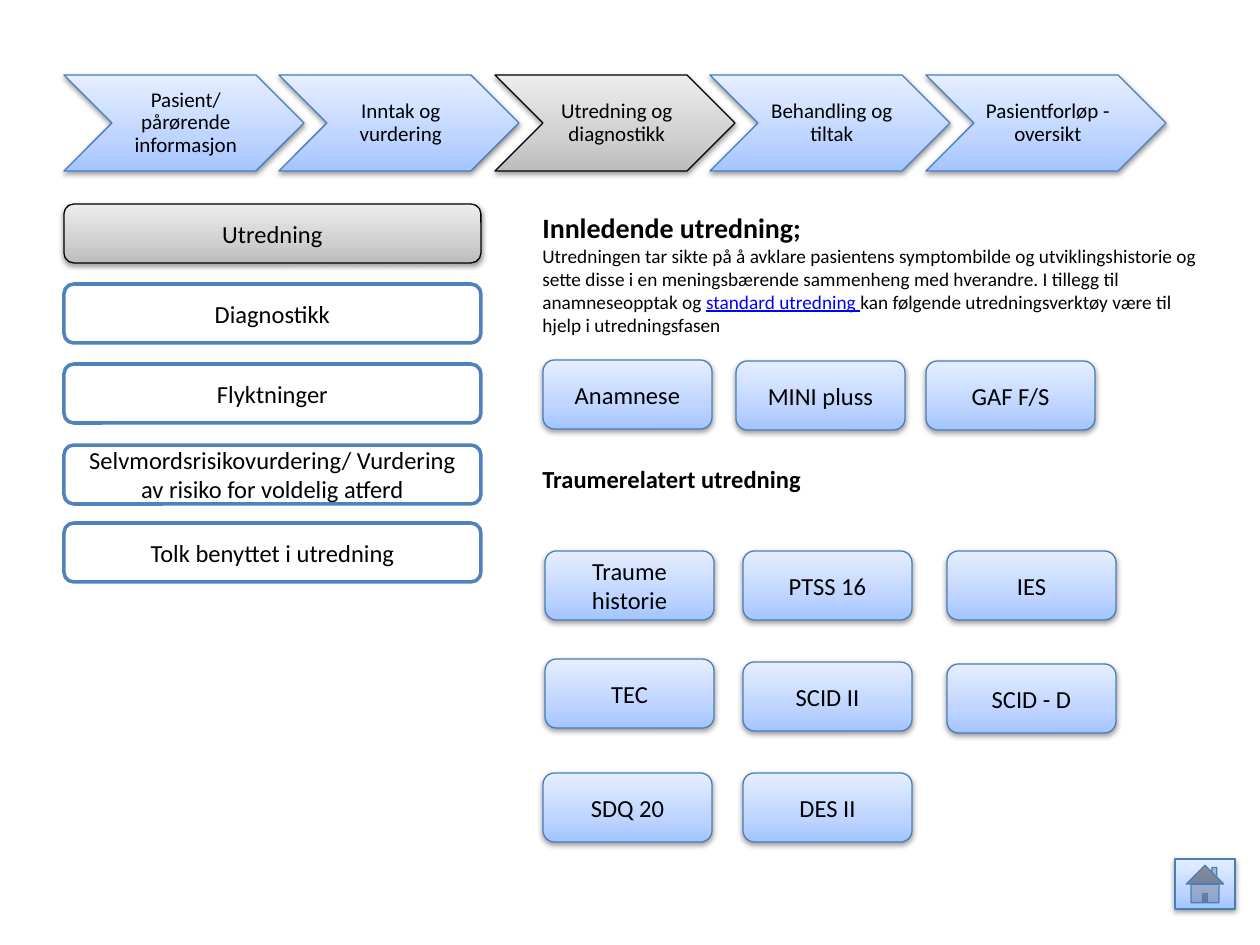
from copy import deepcopy

from pptx import Presentation, oxml, util as u
from pptx.dml.color import RGBColor
from pptx.enum import shapes, text
from pptx.oxml import ns

PX = u.Inches(1) / 126
FONT = "Calibri"
COLORS = {
    "text": "000000",
    "link": "0000FF",
    "white": "FFFFFF",
    "outline": "4F81BD",
    "blue_line": "4A7EBB",
    "grey_line": "000000",
}
GRADIENTS = {
    "blue": ["A3C4FF", "BFD5FF", "E5EEFF"],
    "grey": ["BCBCBC", "D0D0D0", "EDEDED"],
}
SHADOW = (
    f'<a:outerShdw {ns.nsdecls("a")} blurRad="40000" dist="20000" dir="5400000" rotWithShape="0">'
    '<a:srgbClr val="000000"><a:alpha val="38000"/></a:srgbClr></a:outerShdw>'
)


def format_run(run, size, color="text", bold=False):
    run.font.name = FONT
    run.font.size = u.Pt(size)
    run.font.bold = bold
    run.font.color.rgb = RGBColor.from_string(COLORS[color])


def add_button(kind, left, top, width, height, style, label="", size=14):
    shape = slide.shapes.add_shape(kind, *[round(n * PX) for n in (left, top, width, height)])
    shape.shadow.inherit = False
    if style == "outline":
        shape.fill.solid()
        shape.fill.fore_color.rgb = RGBColor.from_string(COLORS["white"])
        shape.line.color.rgb = RGBColor.from_string(COLORS["outline"])
        shape.line.width = u.Pt(2)
    else:
        shape.fill.gradient()
        shape.fill.gradient_angle = 90
        properties = shape._element.spPr
        stop_list = properties.find(".//" + ns.qn("a:gsLst"))
        stop_list.append(deepcopy(stop_list[0]))
        for stop, position, color in zip(shape.fill.gradient_stops, (0, 0.35, 1), GRADIENTS[style]):
            stop.position = position
            stop.color.rgb = RGBColor.from_string(color)
        shape.line.color.rgb = RGBColor.from_string(COLORS[style + "_line"])
        shape.line.width = u.Pt(0.75)
        properties.find(ns.qn("a:effectLst")).append(oxml.parse_xml(SHADOW))
    if label:
        frame = shape.text_frame
        frame.text = label
        frame.word_wrap = True
        frame.vertical_anchor = text.MSO_ANCHOR.MIDDLE
        frame.paragraphs[0].alignment = text.PP_ALIGN.CENTER
        format_run(frame.paragraphs[0].runs[0], size)
    return shape


presentation = Presentation()
presentation.slide_width = u.Inches(10)
presentation.slide_height = u.Inches(7.5)
slide = presentation.slides.add_slide(presentation.slide_layouts[6])

add_button(shapes.MSO_SHAPE.ACTION_BUTTON_HOME, 1175, 859, 60, 50, "blue")

box = slide.shapes.add_textbox(*[round(n * PX) for n in (530, 204, 694, 432)])
frame = box.text_frame
frame.word_wrap = True
heading = frame.paragraphs[0]
heading.text = "Innledende utredning;"
format_run(heading.runs[0], 16, bold=True)
introduction = frame.add_paragraph()
for content, color in [
    ("Utredningen tar sikte på å avklare pasientens symptombilde og utviklingshistorie og "
     "sette disse i en meningsbærende sammenheng med hverandre. I tillegg til "
     "anamneseopptak og ", "text"),
    ("standard utredning ", "link"),
    ("kan følgende utredningsverktøy være til hjelp i utredningsfasen", "text"),
]:
    run = introduction.add_run()
    run.text = content
    format_run(run, 11, color)
    run.font.underline = color == "link"
trauma_heading = frame.add_paragraph()
trauma_heading.text = "Traumerelatert utredning"
trauma_heading.space_before = u.Pt(73)
format_run(trauma_heading.runs[0], 14, bold=True)

steps = [
    "Pasient/ pårørende informasjon",
    "Inntak og vurdering",
    "Utredning og diagnostikk",
    "Behandling og tiltak",
    "Pasientforløp - oversikt",
]
for index, label in enumerate(steps):
    style = "grey" if index == 2 else "blue"
    left = 64 + round(215.4 * index)
    chevron = add_button(shapes.MSO_SHAPE.CHEVRON, left, 75, 240, 96, style, label, 12)
    frame = chevron.text_frame
    frame.margin_left = u.Inches(0.05)
    frame.margin_right = frame.margin_top = frame.margin_bottom = u.Inches(0.02)
    frame.paragraphs[0].line_spacing = 0.9

menu = [
    ("Utredning", 204, "grey"),
    ("Diagnostikk", 284, "outline"),
    ("Flyktninger", 364, "outline"),
    ("Selvmordsrisikovurdering/ Vurdering av risiko for voldelig atferd", 445, "outline"),
    ("Tolk benyttet i utredning", 523, "outline"),
]
for label, top, style in menu:
    add_button(shapes.MSO_SHAPE.ROUNDED_RECTANGLE, 64, top, 417, 59, style, label)

tools = [
    ("Anamnese", 543, 360), ("MINI pluss", 736, 361), ("GAF F/S", 926, 361),
    ("Traume historie", 545, 551), ("PTSS 16", 743, 551), ("IES", 947, 551),
    ("TEC", 545, 659), ("SCID II", 743, 662), ("SCID - D", 947, 664),
    ("SDQ 20", 543, 773), ("DES II", 743, 773),
]
for label, left, top in tools:
    add_button(shapes.MSO_SHAPE.ROUNDED_RECTANGLE, left, top, 169, 69, "blue", label)

presentation.save("out.pptx")
